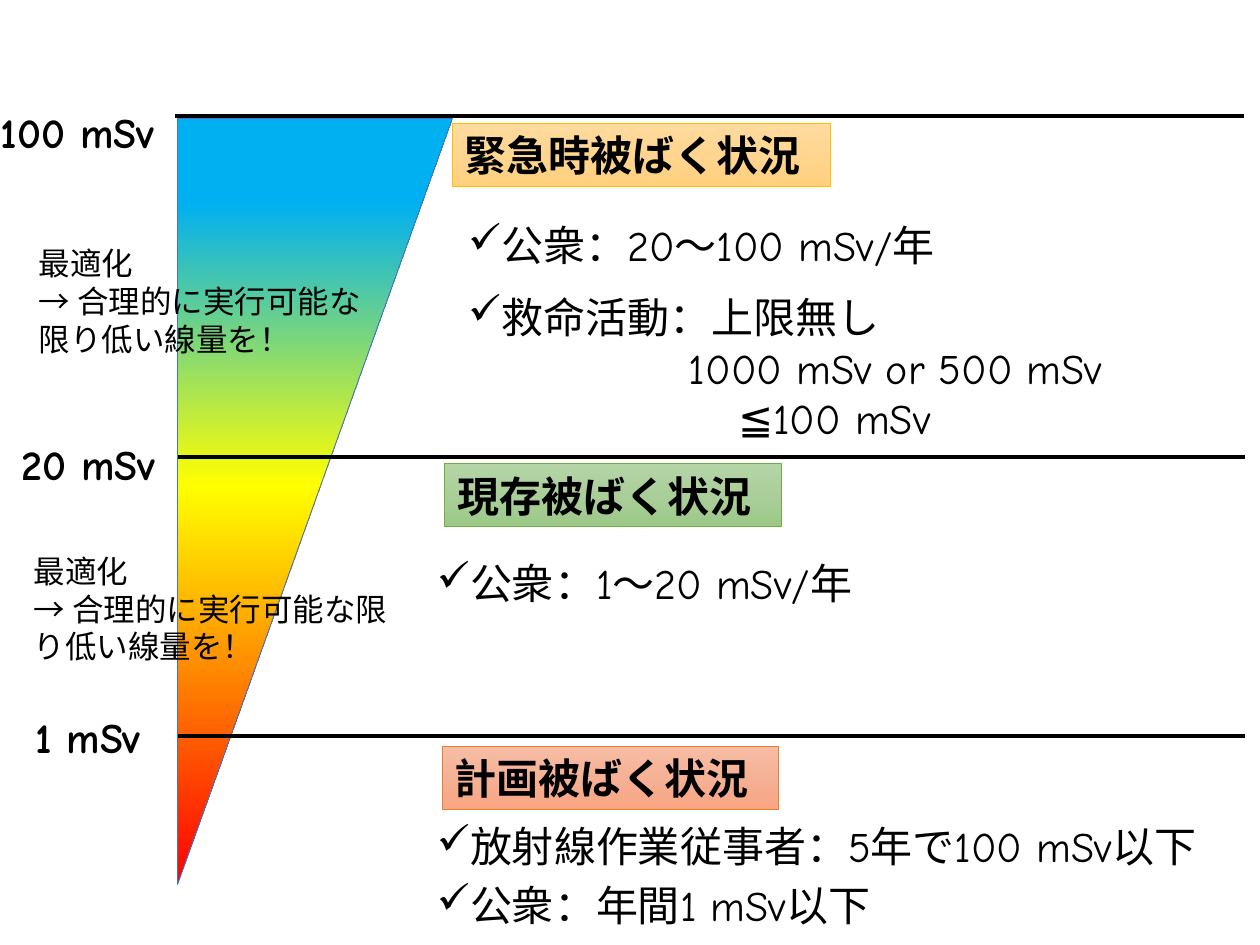
"""Build a slide of the three radiation exposure situations and their dose bands."""
from lxml import etree
from pptx import Presentation
from pptx import util as u
from pptx.dml import color
from pptx.enum import shapes, text
from pptx.oxml import ns

FONT = "Comic Neue"
COLORS = {"ink": "000000", "wedge": "4472C4", "emergency": "FFC000",
          "existing": "70AD47", "planned": "ED7D31"}
GRADIENTS = {
    "wedge": [(0, "FF0000"), (52, "FFFF00"), (89, "00B0F0")],
    "emergency": [(0, "FFDB9E"), (50, "FFD590"), (100, "FFD07C")],
    "existing": [(0, "B5D5A7"), (50, "AACE9A"), (100, "9CC987")],
    "planned": [(0, "F7BDA5"), (50, "F5B196"), (100, "F8A582")],
}
WEDGE = (3.58, 2.39, 5.54, 15.44)
LEVELS = [
    ("100 mSv", (-0.23, 2.03, 4.11, 1.27), (3.53, 25.07, 2.34)),
    ("20 mSv", (0.18, 8.71, 3.61, 1.27), (3.58, 25.1, 9.22)),
    ("1 mSv", (0.46, 14.22, 3.18, 1.27), (3.58, 25.1, 14.83)),
]
NOTE = ["最適化", "→ 合理的に実行可能な限り低い線量を！"]
NOTE_PLACES = [(0.53, 4.8, 7.14, 2.57), (0.43, 11, 7.65, 2.57)]
HEADINGS = [
    ("emergency", "緊急時被ばく状況", (9.12, 2.49, 7.62, 1.27)),
    ("existing", "現存被ばく状況", (8.97, 9.35, 6.78, 1.27)),
    ("planned", "計画被ばく状況", (8.92, 15.04, 6.78, 1.27)),
]
HANG = 0.48
EMERGENCY_LIMITS = [
    {"words": "公衆：20～100 mSv/年", "bullet": True, "spacing": 0.9, "after": 12},
    {"words": "救命活動：上限無し", "bullet": True},
    {"words": "1000 mSv or 500 mSv", "indent": 4.45},
    {"words": "≦100 mSv", "indent": 5.44},
]
EXISTING_LIMITS = [{"words": "公衆：1～20 mSv/年", "bullet": True, "spacing": 0.9}]
PLANNED_LIMITS = [
    {"words": "放射線作業従事者：5年で100 mSv以下", "bullet": True, "spacing": 0.9},
    {"words": "公衆：年間1 mSv以下", "bullet": True, "spacing": 0.9, "before": 7.5},
]
LIMITS = [
    (EMERGENCY_LIMITS, (9.19, 4.42, 19.56, 4.29)),
    (EXISTING_LIMITS, (8.56, 11.23, 15.49, 1.12)),
    (PLANNED_LIMITS, (8.56, 16.54, 16.89, 2.57)),
]


def lengths(place):
    return [u.Cm(value) for value in place]


def set_gradient(shape, stops):
    shape.fill.gradient()
    shape.fill.gradient_angle = 270
    stop_list = shape._element.spPr.find(ns.qn("a:gradFill")).find(ns.qn("a:gsLst"))
    for old in list(stop_list):
        stop_list.remove(old)
    for percent, value in stops:
        stop = etree.SubElement(stop_list, ns.qn("a:gs"), pos=str(percent * 1000))
        etree.SubElement(stop, ns.qn("a:srgbClr"), val=value)


def add_filled(page, kind, place, name):
    shape = page.shapes.add_shape(kind, *lengths(place))
    shape.shadow.inherit = False
    set_gradient(shape, GRADIENTS[name])
    shape.line.color.rgb = color.RGBColor.from_string(COLORS[name])
    shape.line.width = u.Pt(0.5)
    return shape


def set_indent(para, item):
    properties = para._p.get_or_add_pPr()
    if item.get("bullet"):
        properties.set("marL", str(u.Cm(HANG)))
        properties.set("indent", str(-u.Cm(HANG)))
        etree.SubElement(properties, ns.qn("a:buChar"), char="✓")
    elif "indent" in item:
        properties.set("marL", str(u.Cm(item["indent"])))


def write(box, items, size=24, bold=False, wrap=True):
    frame = box.text_frame
    frame.word_wrap = wrap
    for index, item in enumerate(items):
        para = frame.paragraphs[0] if index == 0 else frame.add_paragraph()
        para.alignment = text.PP_ALIGN.LEFT
        set_indent(para, item)
        if "spacing" in item:
            para.line_spacing = item["spacing"]
        if "before" in item:
            para.space_before = u.Pt(item["before"])
        if "after" in item:
            para.space_after = u.Pt(item["after"])
        span = para.add_run()
        span.text = item["words"]
        span.font.name = FONT
        span.font.size = u.Pt(size)
        span.font.bold = bold
        span.font.color.rgb = color.RGBColor.from_string(COLORS["ink"])


def add_rule(page, left, right, top):
    rule = page.shapes.add_connector(
        shapes.MSO_CONNECTOR.STRAIGHT, *lengths((left, top, right, top)))
    rule.line.color.rgb = color.RGBColor.from_string(COLORS["ink"])
    rule.line.width = u.Pt(2.25)
    etree.SubElement(rule._element.spPr, ns.qn("a:effectLst"))


def main():
    deck = Presentation()
    deck.slide_width, deck.slide_height = u.Cm(25.4), u.Cm(19.05)
    page = deck.slides.add_slide(deck.slide_layouts[6])

    wedge = add_filled(page, shapes.MSO_SHAPE.ISOSCELES_TRIANGLE, WEDGE, "wedge")
    wedge.adjustments[0] = 0
    wedge._element.spPr.find(ns.qn("a:xfrm")).set("flipV", "1")

    for place in NOTE_PLACES:
        box = page.shapes.add_textbox(*lengths(place))
        write(box, [{"words": words} for words in NOTE], size=18)
    for name, words, place in HEADINGS:
        heading = add_filled(page, shapes.MSO_SHAPE.RECTANGLE, place, name)
        write(heading, [{"words": words}], bold=True)
    for words, place, rule in LEVELS:
        box = page.shapes.add_textbox(*lengths(place))
        write(box, [{"words": words}], bold=True, wrap=False)
        add_rule(page, *rule)
    for items, place in LIMITS:
        write(page.shapes.add_textbox(*lengths(place)), items)

    deck.save("out.pptx")


if __name__ == "__main__":
    main()
